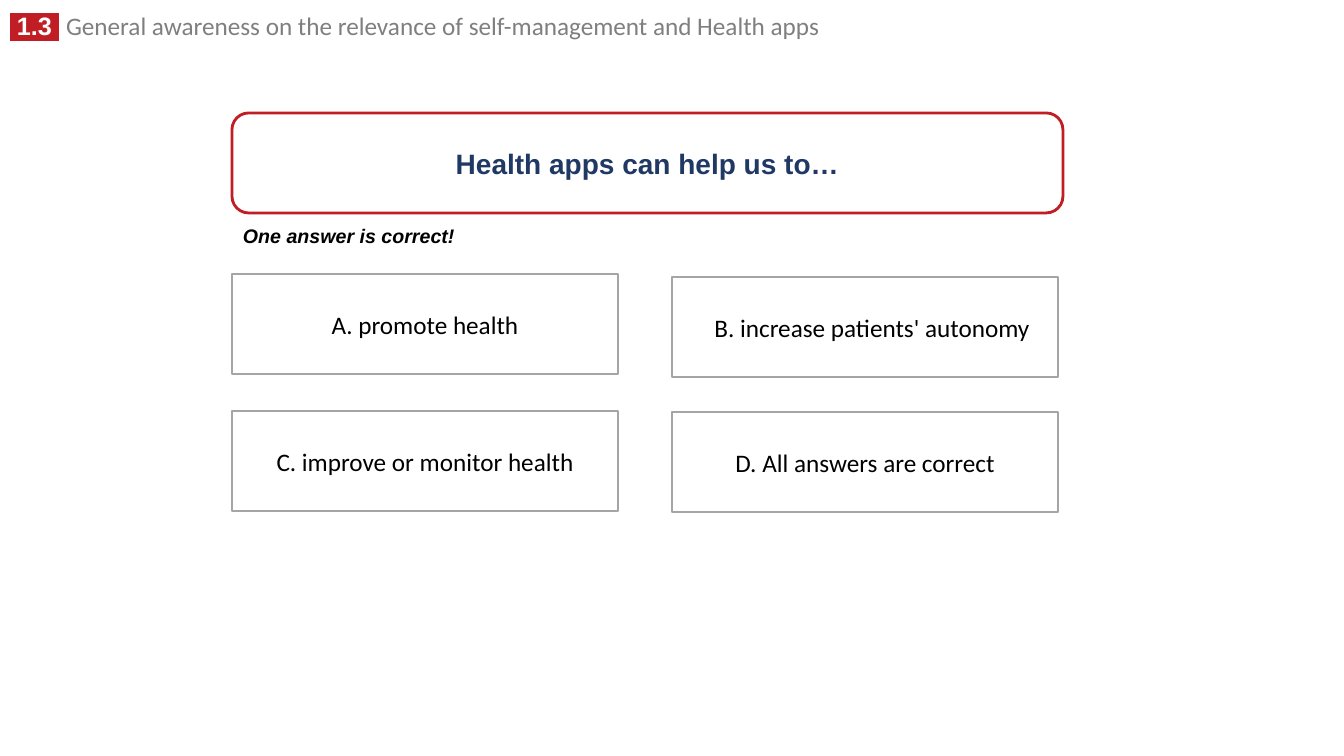
from lxml import etree
from pptx import Presentation
from pptx.dml.color import RGBColor
from pptx.enum.shapes import MSO_SHAPE
from pptx.enum.text import MSO_ANCHOR, MSO_AUTO_SIZE, PP_ALIGN
from pptx.oxml.ns import qn
from pptx.util import Pt

PX = 914400 / 100.8
RED = RGBColor(0xC0, 0x1E, 0x24)
NAVY = RGBColor(0x20, 0x38, 0x64)
GREY = RGBColor(0x7F, 0x7F, 0x7F)
BORDER = RGBColor(0xA5, 0xA5, 0xA5)
WHITE = RGBColor(0xFF, 0xFF, 0xFF)
BLACK = RGBColor(0x00, 0x00, 0x00)


def px(*lengths):
    return [round(length * PX) for length in lengths]


def format_run(run, font, size, color, bold=False, italic=False):
    run.font.name = font
    run.font.size = Pt(size)
    run.font.color.rgb = color
    run.font.bold = bold
    run.font.italic = italic


presentation = Presentation()
presentation.slide_width, presentation.slide_height = px(1344, 756)
slide = presentation.slides.add_slide(presentation.slide_layouts[5])

# Section heading with its highlighted number
title = slide.shapes.title
title.left, title.top, title.width, title.height = px(0, 11, 960, 34)
frame = title.text_frame
frame.word_wrap = True
frame.auto_size = MSO_AUTO_SIZE.NONE
frame.vertical_anchor = MSO_ANCHOR.TOP
frame.margin_left, frame.margin_top = px(10, 5)
paragraph = frame.paragraphs[0]
paragraph.alignment = PP_ALIGN.LEFT
paragraph.line_spacing = 0.8
heading = [
    (" 1.3 ", "Arial", WHITE, True),
    (" ", "Arial", GREY, False),
    ("General awareness on the relevance of self-management and Health apps",
     "Calibri", GREY, False),
]
for text, font, color, bold in heading:
    run = paragraph.add_run()
    run.text = text
    format_run(run, font, 18, color, bold)
number_font = paragraph.runs[0].font
highlight = etree.Element(qn("a:highlight"))
etree.SubElement(highlight, qn("a:srgbClr"), val=str(RED))
number_font.fill  # the fill precedes the highlight in the run properties
paragraph.runs[0].font._rPr.find(qn("a:solidFill")).addnext(highlight)

# Question and answer boxes: text, kind, position and size, line, font, size, colour, bold, left inset
ANSWER_SIZE = (386, 100)
boxes = [("Health apps can help us to…", MSO_SHAPE.ROUNDED_RECTANGLE,
          (232, 113, 831, 100), RED, "Arial", 20, NAVY, True, 10)]
answers = [
    ("A. promote health", 232, 274, 10),
    ("B. increase patients' autonomy", 672, 277, 24),
    ("C. improve or monitor health", 232, 411, 10),
    ("D. All answers are correct", 672, 412, 10),
]
for text, left, top, inset in answers:
    boxes.append((text, MSO_SHAPE.RECTANGLE, (left, top, *ANSWER_SIZE),
                  BORDER, "Calibri", 18, BLACK, False, inset))

for text, kind, place, line_color, font, size, color, bold, inset in boxes:
    shape = slide.shapes.add_shape(kind, *px(*place))
    shape.shadow.inherit = False
    shape.fill.solid()
    shape.fill.fore_color.rgb = WHITE
    shape.line.color.rgb = line_color
    shape.line.width = Pt(2)
    frame = shape.text_frame
    frame.text = text
    frame.word_wrap = True
    frame.vertical_anchor = MSO_ANCHOR.MIDDLE
    frame.margin_left = px(inset)[0]
    paragraph = frame.paragraphs[0]
    paragraph.alignment = PP_ALIGN.CENTER
    format_run(paragraph.runs[0], font, size, color, bold)

# Hint under the question
hint = slide.shapes.add_textbox(*px(233, 219, 233, 34))
hint.text_frame.text = "One answer is correct!"
hint.text_frame.word_wrap = False
format_run(hint.text_frame.paragraphs[0].runs[0], "Arial", 14, BLACK, True, True)

presentation.save("out.pptx")
